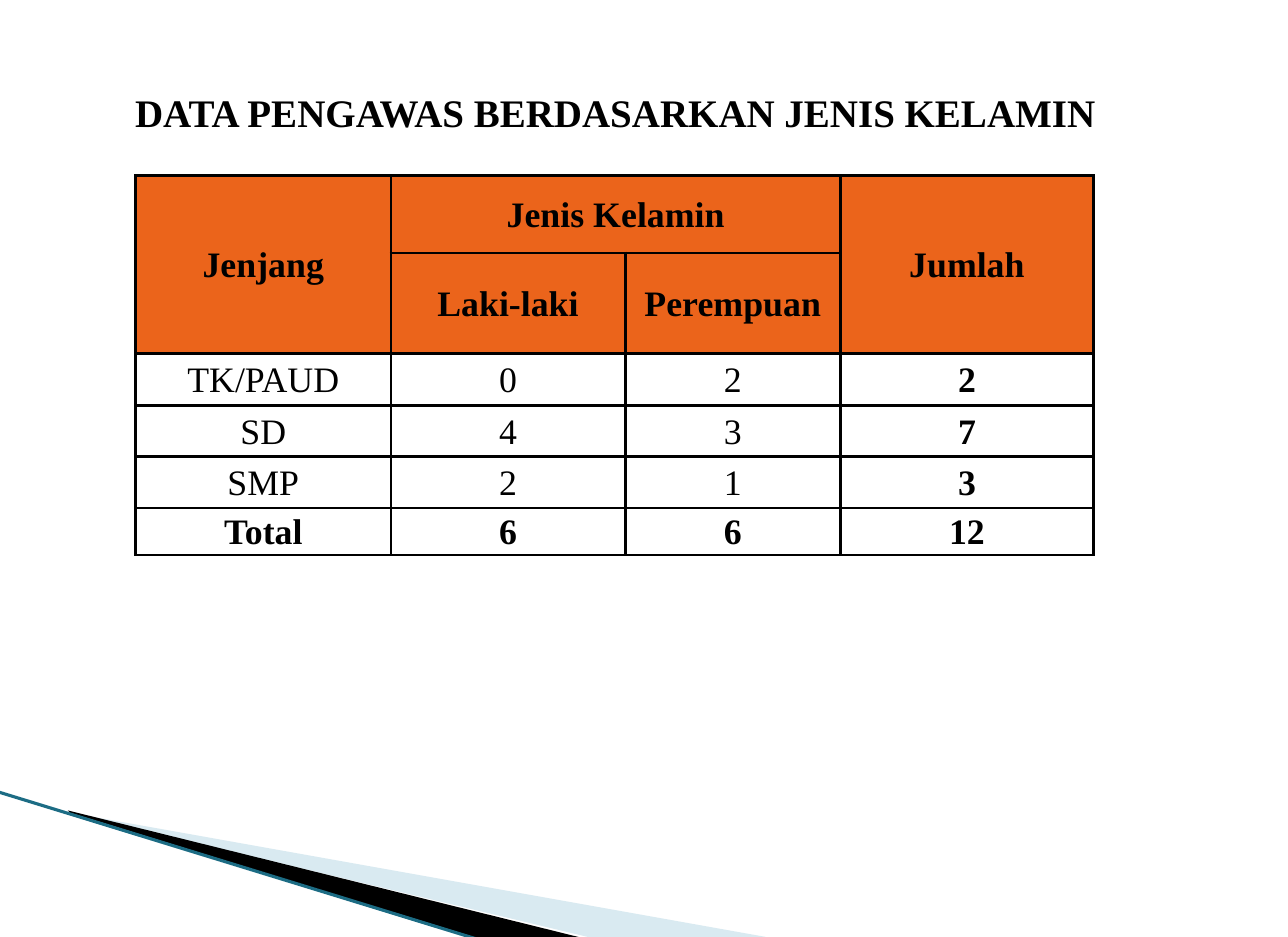
from dataclasses import dataclass
from lxml.etree import SubElement as Sub
from pptx import Presentation
from pptx.dml.color import RGBColor as Rgb
from pptx.enum.shapes import MSO_CONNECTOR as Link
from pptx.enum.text import MSO_ANCHOR as Anchor, MSO_AUTO_SIZE as Fit, PP_ALIGN as Align
from pptx.oxml.ns import qn
from pptx.util import Inches, Pt

COLS, ROWS = 550, 400
UNIT = Inches(5.5) // COLS


@dataclass(frozen=True)
class Theme:
    face: str = "Times New Roman"
    ink: str = "000000"
    head: str = "EB641B"
    pale: str = "A0CBDC"
    edge: str = "1C6C84"
    title: int = 12
    cell: int = 11
    rule: float = 1
    thin: float = 0.95


THEME = Theme()

WIDTHS = [109, 100, 92, 108]
HEIGHTS = [33, 43, 22, 22, 22, 20]
DATA = [
    ["Jenjang", "Jenis Kelamin", "", "Jumlah"],
    ["", "Laki-laki", "Perempuan", ""],
    ["TK/PAUD", "0", "2", "2"],
    ["SD", "4", "3", "7"],
    ["SMP", "2", "1", "3"],
    ["Total", "6", "6", "12"],
]
SPANS = [((0, 0), (1, 0)), ((0, 1), (0, 2)), ((0, 3), (1, 3))]


def grid(*cells):
    """Turn grid counts into slide lengths."""
    return [round(n * UNIT) for n in cells]


def apply(item, values):
    for name, value in values.items():
        setattr(item, name, value)


def write(frame, text, size, bold=True):
    frame.text = text
    para = frame.paragraphs[0]
    para.alignment = Align.CENTER
    for run in para.runs:
        apply(run.font, {"name": THEME.face, "size": Pt(size), "bold": bold})
        run.font.color.rgb = Rgb.from_string(THEME.ink)


def add_title(slide, text):
    shape = slide.shapes.title
    left, top, width, height = grid(17, 33, 492, 25)
    apply(shape, {"left": left, "top": top, "width": width, "height": height})
    frame = shape.text_frame
    apply(frame, {
        "margin_left": 0, "margin_right": 0, "margin_bottom": 0,
        "margin_top": Inches(0.03), "vertical_anchor": Anchor.BOTTOM,
        "word_wrap": True, "auto_size": Fit.NONE,
    })
    write(frame, text, THEME.title)


def add_wedge(slide, points, color, alpha=100):
    """Draw a filled outline; alpha is its opacity in percent."""
    first, *rest = [grid(*point) for point in points]
    pen = slide.shapes.build_freeform(*first)
    pen.add_line_segments(rest, close=True)
    shape = pen.convert_to_shape()
    shape.shadow.inherit = False
    shape.fill.solid()
    shape.fill.fore_color.rgb = Rgb.from_string(color)
    shape.line.fill.background()
    if alpha < 100:
        tone = shape.fill._xPr.find(".//" + qn("a:srgbClr"))
        Sub(tone, qn("a:alpha"), val=str(alpha * 1000))


def add_line(slide, start, end):
    line = slide.shapes.add_connector(Link.STRAIGHT, *grid(*start, *end))
    line.line.color.rgb = Rgb.from_string(THEME.edge)
    line.line.width = Pt(THEME.thin)
    Sub(line._element.spPr, qn("a:effectLst"))


def frame_cell(cell):
    props = cell._tc.get_or_add_tcPr()
    for side in "LRTB":
        line = Sub(props, qn("a:ln" + side), w=str(Pt(THEME.rule)))
        Sub(Sub(line, qn("a:solidFill")), qn("a:srgbClr"), val=THEME.ink)


def style_cell(cell, text, head, bold):
    gap = Inches(0.01)
    apply(cell, {
        "margin_left": gap, "margin_top": gap, "margin_right": gap,
        "margin_bottom": 0, "vertical_anchor": Anchor.MIDDLE,
    })
    frame_cell(cell)
    if head:
        cell.fill.solid()
        cell.fill.fore_color.rgb = Rgb.from_string(THEME.head)
    else:
        cell.fill.background()
    if text:
        write(cell.text_frame, text, THEME.cell, bold)


def add_data(slide):
    box = grid(58, 75, sum(WIDTHS), sum(HEIGHTS))
    table = slide.shapes.add_table(len(HEIGHTS), len(WIDTHS), *box).table
    apply(table, {"first_row": False, "horz_banding": False})
    for col, width in zip(table.columns, grid(*WIDTHS)):
        col.width = width
    for row, height in zip(table.rows, grid(*HEIGHTS)):
        row.height = height
    for start, end in SPANS:
        table.cell(*start).merge(table.cell(*end))
    last_row, last_col = len(HEIGHTS) - 1, len(WIDTHS) - 1
    for r, row in enumerate(DATA):
        for c, text in enumerate(row):
            head = r < 2
            bold = head or r == last_row or c == last_col
            style_cell(table.cell(r, c), text, head, bold)


def main():
    deck = Presentation()
    apply(deck, {"slide_width": COLS * UNIT, "slide_height": ROWS * UNIT})
    slide = deck.slides.add_slide(deck.slide_layouts[5])
    add_wedge(slide, [(30, 347), (327, ROWS), (251, ROWS)], THEME.pale, 40)
    add_wedge(slide, [(29, 346), (251, 401), (205, 401), (30, 347)], THEME.ink)
    add_line(slide, (-1, 338), (204, 401))
    add_title(slide, "DATA PENGAWAS BERDASARKAN JENIS KELAMIN")
    add_data(slide)
    deck.save("out.pptx")


if __name__ == "__main__":
    main()
